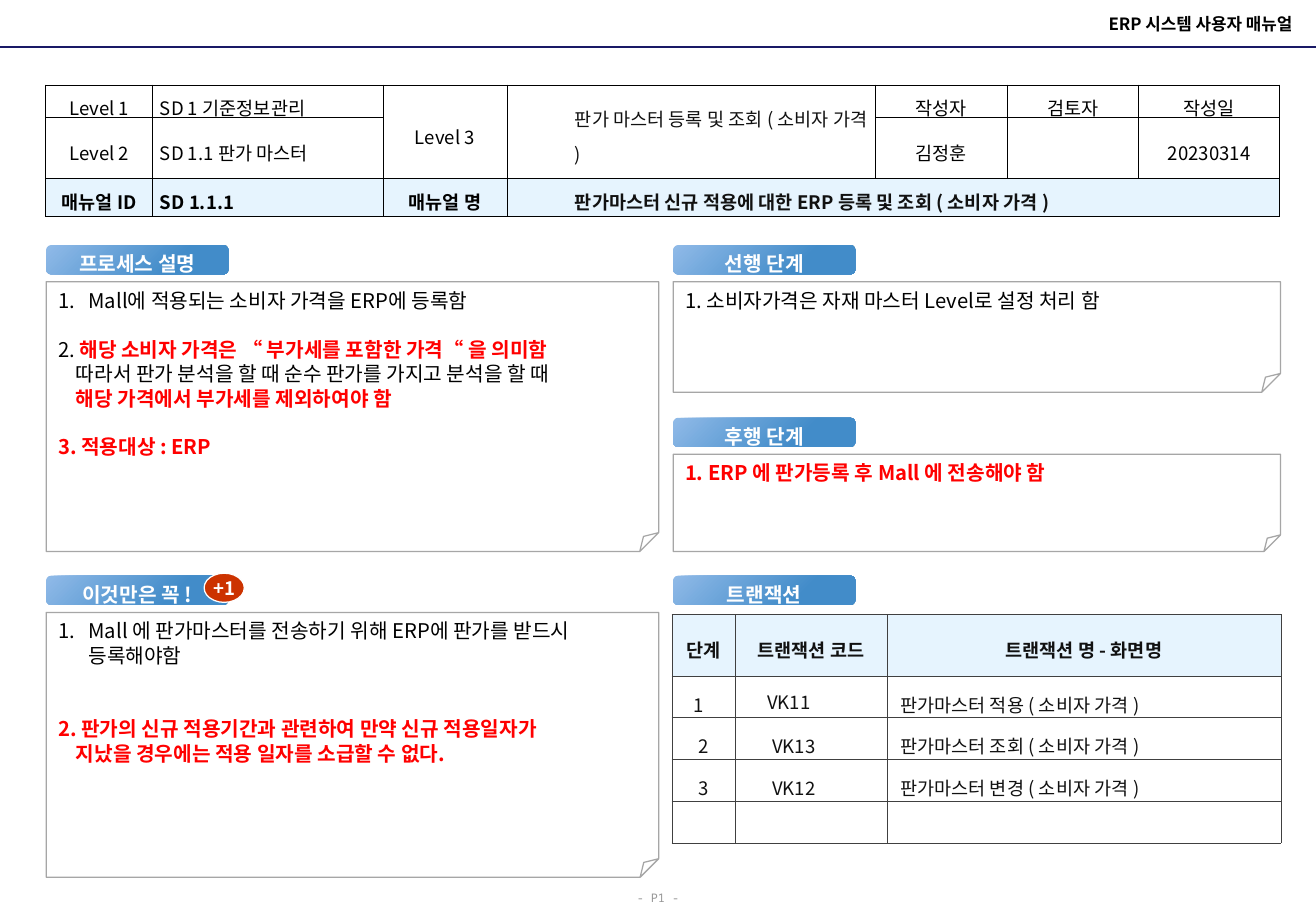
from lxml import etree
from pptx import Presentation
from pptx.dml.color import RGBColor
from pptx.enum.shapes import MSO_CONNECTOR, MSO_SHAPE
from pptx.enum.text import MSO_ANCHOR, PP_ALIGN
from pptx.oxml.ns import qn
from pptx.util import Pt

# Content
FONT, MONO = "Noto Sans CJK KR", "Noto Sans Mono"
HUES = {"black": "000000", "ink": "111111", "white": "FFFFFF", "red": "FF0000",
        "navy": "191966", "gray": "A6A6A6", "foot": "969696", "grid": "404040",
        "badge": "CC3300", "tint": "E6F4FE", "light": "90BAE8", "deep": "428CC9"}
LEFT, RIGHT, CENTER = PP_ALIGN.LEFT, PP_ALIGN.RIGHT, PP_ALIGN.CENTER
TITLE = "ERP 시스템 사용자 매뉴얼"
INFO = [
    ["Level 1", "SD 1 기준정보관리", "Level 3", "판가 마스터 등록 및 조회 ( 소비자 가격 )",
     "작성자", "검토자", "작성일"],
    ["Level 2", "SD 1.1 판가 마스터", None, None, "김정훈", "", "20230314"],
    ["매뉴얼 ID", "SD 1.1.1", "매뉴얼 명",
     "판가마스터 신규 적용에 대한 ERP 등록 및 조회 ( 소비자 가격 )", None, None, None],
]
CODES = [
    ["단계", "트랜잭션 코드", "트랜잭션 명 - 화면명"],
    ["1", "VK11", "판가마스터 적용 ( 소비자 가격 )"],
    ["2", "VK13", "판가마스터 조회 ( 소비자 가격 )"],
    ["3", "VK12", "판가마스터 변경 ( 소비자 가격 )"],
    ["", "", ""],
]
# Heading: label, left, top
HEADS = [("프로세스 설명", 27.4, 145.4), ("선행 단계", 399, 145.4), ("후행 단계", 399, 247.7),
         ("이것만은 꼭 !", 27.4, 341.3), ("트랜잭션", 399, 341.3)]
# Note: place, fold, lines; line: runs (text, red), then its format
NOTES = [
    ((27.4, 167, 363, 160), 0.07, [
        ([("Mall에 적용되는 소비자 가격을 ERP에 등록함", False)], {"num": True}),
        ([("2. ", False), ("해당 소비자 가격은 “ 부가세를 포함한 가격“ 을 의미함", True)],
         {"before": 14.5}),
        ([("따라서 판가 분석을 할 때 순수 판가를 가지고 분석을 할 때", False)], {"left": 10.5}),
        ([("해당 가격에서 부가세를 제외하여야 함", True)], {"left": 10.5}),
        ([("3. 적용대상 : ERP", True)], {"before": 14.5})]),
    ((399, 167, 360, 65.5), 0.17,
     [([("1. 소비자가격은 자재 마스터 Level로 설정 처리 함", False)], {})]),
    ((399, 269.3, 360, 57.6), 0.17,
     [([("1. ERP 에 판가등록 후 Mall 에 전송해야 함", True)], {})]),
    ((27.4, 363, 363, 157), 0.07, [
        ([("Mall 에 판가마스터를 전송하기 위해 ERP에 판가를 받드시 등록해야함", False)],
         {"num": True}),
        ([("2. 판가의 신규 적용기간과 관련하여 만약 신규 적용일자가", True)], {"before": 29}),
        ([("지났을 경우에는 적용 일자를 소급할 수 없다.", True)], {"left": 10.5})]),
]

deck = Presentation()
deck.slide_width, deck.slide_height = Pt(780), Pt(540)
shapes = deck.slides.add_slide(deck.slide_layouts[6]).shapes

def hue(name):
    return RGBColor.from_string(HUES[name])

def write(para, words, size=12, bold=False, color="black", align=LEFT, font=FONT,
          space=None, before=0, left=0, hang=0, num=False):
    """Fill a paragraph; words is a string or a list of (text, red)."""
    para.alignment = align
    if space:
        para.line_spacing = space
    if before:
        para.space_before = Pt(before)
    if num:
        left, hang = 18, 18
    props = para._p.get_or_add_pPr()
    props.set("marL", str(Pt(left)))
    props.set("indent", str(-Pt(hang)))
    if num:
        etree.SubElement(props, qn("a:buAutoNum"), type="arabicPeriod")
    if not words:
        etree.SubElement(para._p, qn("a:endParaRPr"), sz=str(size * 100))
        return
    for text, red in [(words, False)] if isinstance(words, str) else words:
        run = para.add_run()
        run.text = text
        run.font.size, run.font.name = Pt(size), font
        run.font.bold = bold or red
        run.font.color.rgb = hue("red" if red else color)
        etree.SubElement(run.font._element, qn("a:ea"), typeface=font)

def inset(part, left, top, right, low):
    part.margin_left, part.margin_top = Pt(left), Pt(top)
    part.margin_right, part.margin_bottom = Pt(right), Pt(low)

def draw(kind, place, line=None, anchor=MSO_ANCHOR.MIDDLE):
    shape = shapes.add_shape(kind, *map(Pt, place))
    shape.shadow.inherit = False
    if line:
        shape.line.color.rgb, shape.line.width = hue(line), Pt(0.75)
    else:
        shape.line.fill.background()
    shape.text_frame.word_wrap = True
    shape.text_frame.vertical_anchor = anchor
    return shape, shape.text_frame

def label(place, words, **form):
    frame = shapes.add_textbox(*map(Pt, place)).text_frame
    frame.word_wrap = True
    frame.vertical_anchor = MSO_ANCHOR.MIDDLE
    write(frame.paragraphs[0], words, **form)

def edge(cell, color):
    props = cell._tc.get_or_add_tcPr()
    for side in ("lnL", "lnR", "lnT", "lnB"):
        line = etree.SubElement(props, qn("a:" + side), w=str(Pt(0.5)))
        solid = etree.SubElement(line, qn("a:solidFill"))
        etree.SubElement(solid, qn("a:srgbClr"), val=HUES[color])

def table(data, left, top, cols, rows, color, spans, style):
    """Draw a table; style gives fill, insets and text format by row, column."""
    grid = shapes.add_table(len(rows), len(cols), Pt(left), Pt(top),
                            Pt(sum(cols)), Pt(sum(rows))).table
    grid.first_row = grid.horz_banding = False
    for col, wide in zip(grid.columns, cols):
        col.width = Pt(wide)
    for row, high in zip(grid.rows, rows):
        row.height = Pt(high)
    for r, line in enumerate(data):
        for c, words in enumerate(line):
            cell = grid.cell(r, c)
            fill, pad, form = style(r, c)
            edge(cell, color)
            cell.fill.solid()
            cell.fill.fore_color.rgb = hue(fill)
            cell.vertical_anchor = MSO_ANCHOR.MIDDLE
            inset(cell, *pad)
            write(cell.text_frame.paragraphs[0], words, size=11, space=1.3, **form)
    for start, end in spans:
        grid.cell(*start).merge(grid.cell(*end))

def info(r, c):
    pad = (40.3 if c == 3 else 4.3, 0.7, 4.3, 0.7)
    return ("tint" if r == 2 else "white", pad,
            {"bold": r == 2, "align": LEFT if c in (1, 3) else CENTER,
             "color": "ink" if c == 3 else "black"})

def code(r, c):
    pad = (7.9, 3.6, 7.9, 3.6)
    if r and c == 1:
        pad = (19, 0, 0, 0) if r == 1 else (22, 3.6, 7.9, 3.6)
    elif (r, c) == (1, 0):
        pad = (13, 3.6, 7.9, 3.6)
    mid = r == 0 or (c == 0 and r > 1)
    return ("white" if r else "tint", pad,
            {"bold": r == 0, "align": CENTER if mid else LEFT, "color": "ink"})

# Page frame
rule = shapes.add_connector(MSO_CONNECTOR.STRAIGHT, 0, Pt(28), Pt(780), Pt(28))
rule.line.color.rgb, rule.line.width = hue("navy"), Pt(1.5)
etree.SubElement(rule._element.spPr, qn("a:effectLst"))
label((435, 4.3, 338, 19.4), TITLE, size=10, bold=True, align=RIGHT)
label((360, 522, 60, 18), "- P1 -", size=7, color="foot", font=MONO, align=CENTER, space=1.3)

# Tables
table(INFO, 27, 50.4, [63.5, 136.5, 73.5, 218.5, 78, 78, 83.5], [19, 36.5, 22.5],
      "black", [((0, 2), (1, 2)), ((0, 3), (1, 3)), ((2, 3), (2, 6))], info)
table(CODES, 398.3, 364.3, [37.4, 90, 233.6], [36.7, 24, 24.8, 24.8, 24.8], "grid", [], code)

# Notes
for place, fold, lines in NOTES:
    note, frame = draw(MSO_SHAPE.FOLDED_CORNER, place, "gray", MSO_ANCHOR.TOP)
    note.fill.background()
    guides = next(note._element.iter(qn("a:avLst")))
    etree.SubElement(guides, qn("a:gd"), name="adj", fmla=f"val {round(fold * 100000)}")
    for i, (runs, form) in enumerate(lines):
        para = frame.add_paragraph() if i else frame.paragraphs[0]
        write(para, runs, space=Pt(14.5), **form)

# Headings
for words, left, top in HEADS:
    tab, frame = draw(MSO_SHAPE.ROUNDED_RECTANGLE, (left, top, 108, 17.3))
    tab.fill.gradient()
    tab.fill.gradient_angle = 315
    for stop, name, spot in zip(tab.fill.gradient_stops, ("light", "deep"), (0, 0.7)):
        stop.color.rgb, stop.position = hue(name), spot
    inset(frame, 0, 0, 0, 2.9)
    write(frame.paragraphs[0], words, bold=True, color="white",
          align=CENTER, space=1.5, left=7.2, hang=7.2)

# Badge
badge, frame = draw(MSO_SHAPE.OVAL, (121, 339.8, 23.8, 17.3), "white")
badge.fill.solid()
badge.fill.fore_color.rgb = hue("badge")
frame.word_wrap = False
write(frame.paragraphs[0], "+1", size=11, bold=True, color="white", align=CENTER)

deck.save("out.pptx")
